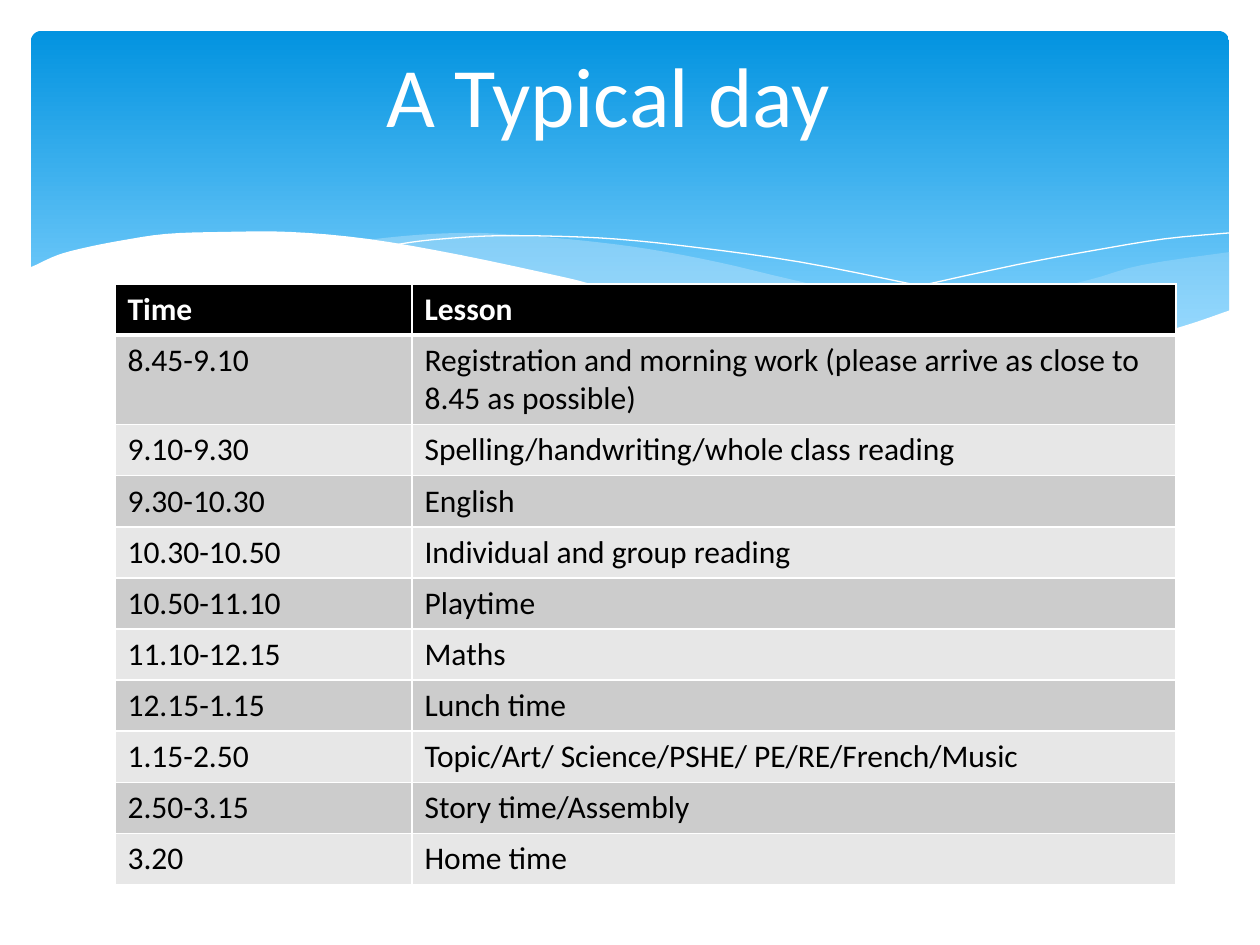
from lxml import etree
from pptx import Presentation
from pptx import util as u
from pptx.dml.color import RGBColor
from pptx.enum import shapes, text
from pptx.oxml.ns import qn

PX = 914400 // 126
TITLE = "A Typical day"
ROWS = [
    ("Time", "Lesson"),
    ("8.45-9.10", "Registration and morning work (please arrive as close to 8.45 as possible)"),
    ("9.10-9.30", "Spelling/handwriting/whole class reading"),
    ("9.30-10.30", "English"),
    ("10.30-10.50", "Individual and group reading"),
    ("10.50-11.10", "Playtime"),
    ("11.10-12.15", "Maths"),
    ("12.15-1.15", "Lunch time"),
    ("1.15-2.50", "Topic/Art/ Science/PSHE/ PE/RE/French/Music"),
    ("2.50-3.15", "Story time/Assembly"),
    ("3.20", "Home time"),
]
COLS = (297, 764)
HIGH, TALL = 51, 89
BANDS = ("E7E7E7", "CCCCCC")

WAVES = [
    dict(fill="C6E7FC", alpha=29, edges=[
        [(1230, 252), (1142, 265), (1085, 281), (981, 305), (889, 324), (833, 334)],
        [(833, 334), (923, 345), (999, 349), (1076, 348), (1140, 338), (1196, 324), (1230, 311)]]),
    dict(fill="C6E7FC", alpha=40, edges=[
        [(1125, 344), (1016, 328), (890, 302), (793, 280), (717, 262), (648, 249),
         (586, 241), (529, 236), (479, 233), (433, 234), (394, 237), (360, 241)],
        [(360, 241), (431, 251), (509, 266), (566, 280), (668, 302), (757, 321),
         (838, 335), (910, 345), (973, 349), (1030, 350), (1080, 349), (1125, 344)]]),
    dict(line="FFFFFF", edges=[
        [(389, 246), (413, 242), (441, 239), (488, 236), (545, 236), (616, 239),
         (701, 248), (800, 262), (916, 285), (1002, 304), (1143, 343)]]),
    dict(line="FFFFFF", edges=[
        [(772, 324), (823, 310), (907, 289), (1016, 265), (1091, 251), (1164, 239), (1229, 233)]]),
    dict(fill="FFFFFF", edges=[
        [(1231, 310), (1184, 326), (1133, 339), (1071, 346), (1002, 349), (937, 345),
         (867, 338), (789, 325), (699, 309), (599, 286), (563, 277), (460, 255),
         (368, 239), (290, 232), (223, 232), (166, 234), (119, 241), (84, 248),
         (58, 255), (36, 265), (29, 268)],
        [(29, 415), (1231, 415)]]),
]


def color(code):
    return RGBColor.from_string(code)


def place(item, *box):
    item.left, item.top, item.width, item.height = (n * PX for n in box)


def write(frame, words, size=18, tint="000000", bold=False, align=None):
    para = frame.paragraphs[0]
    para.alignment = align
    run = para.add_run()
    run.text = words
    font = run.font
    font.name, font.size, font.bold = "Calibri", u.Pt(size), bold
    font.color.rgb = color(tint)


def smooth(points, steps=4):
    if len(points) < 3:
        return points
    ends = [points[0], *points, points[-1]]
    curve = [points[0]]
    for a, b, c, d in zip(ends, ends[1:], ends[2:], ends[3:]):
        for n in range(1, steps + 1):
            t = n / steps
            curve.append(tuple(
                (2 * q + (r - p) * t + (2 * p - 5 * q + 4 * r - s) * t ** 2
                 + (3 * q - p - 3 * r + s) * t ** 3) / 2
                for p, q, r, s in zip(a, b, c, d)))
    return curve


def wave(slide, edges, fill=None, line=None, alpha=100):
    dots = [(round(x * PX), round(y * PX)) for edge in edges for x, y in smooth(edge)]
    pen = slide.shapes.build_freeform(*dots[0], scale=1.0)
    pen.add_line_segments(dots[1:], close=bool(fill))
    shape = pen.convert_to_shape()
    shape.shadow.inherit = False
    if fill:
        shape.fill.solid()
        shape.fill.fore_color.rgb = color(fill)
        tone = shape.fill._xPr.find(qn("a:solidFill"))[0]
        etree.SubElement(tone, qn("a:alpha"), val=str(alpha * 1000))
        shape.line.fill.background()
    else:
        shape.fill.background()
        shape.line.color.rgb = color(line)
        shape.line.width = 0


def border(cell, side, width):
    line = etree.SubElement(cell._tc.get_or_add_tcPr(), qn("a:ln" + side), w=str(u.Pt(width)))
    fill = etree.SubElement(line, qn("a:solidFill"))
    etree.SubElement(fill, qn("a:srgbClr"), val="FFFFFF")


def banner(slide):
    shape = slide.shapes.add_shape(shapes.MSO_SHAPE.ROUNDED_RECTANGLE, 0, 0, 0, 0)
    place(shape, 31, 31, 1198, 340)
    shape.adjustments[0] = 0.03
    shape.shadow.inherit = False
    shape.line.fill.background()
    shape.fill.gradient()
    shape.fill.gradient_angle = 270
    for stop, (spot, tint) in zip(shape.fill.gradient_stops, ((0, "0293E0"), (0.9, "83D3FE"))):
        stop.position = spot
        stop.color.rgb = color(tint)


def heading(slide):
    title = slide.shapes.title
    place(title, 78, 39, 1061, 110)
    frame = title.text_frame
    frame.margin_top, frame.margin_bottom = 4 * PX, 0
    frame.vertical_anchor = text.MSO_ANCHOR.TOP
    frame.auto_size = text.MSO_AUTO_SIZE.NONE
    write(frame, TITLE, size=48.3, tint="FFFFFF", align=text.PP_ALIGN.CENTER)
    slide.shapes._spTree.append(title._element)


def schedule(slide):
    high = HIGH * (len(ROWS) - 1) + TALL
    box = (n * PX for n in (115, 284, sum(COLS), high))
    table = slide.shapes.add_table(len(ROWS), len(COLS), *box).table
    for col, wide in zip(table.columns, COLS):
        col.width = wide * PX
    for i, row in enumerate(ROWS):
        head = i == 0
        table.rows[i].height = (TALL if i == 1 else HIGH) * PX
        for j, words in enumerate(row):
            cell = table.cell(i, j)
            for side in "LRTB":
                thick = (head and side == "B") or (i == 1 and side == "T")
                border(cell, side, 3 if thick else 1)
            cell.fill.solid()
            cell.fill.fore_color.rgb = color("000000" if head else BANDS[i % 2])
            write(cell.text_frame, words, tint="FFFFFF" if head else "000000", bold=head)


def main():
    deck = Presentation()
    deck.slide_width, deck.slide_height = u.Inches(10), u.Inches(7.5)
    slide = deck.slides.add_slide(deck.slide_layouts[5])
    banner(slide)
    for item in WAVES:
        wave(slide, **item)
    heading(slide)
    schedule(slide)
    deck.save("out.pptx")


if __name__ == "__main__":
    main()
